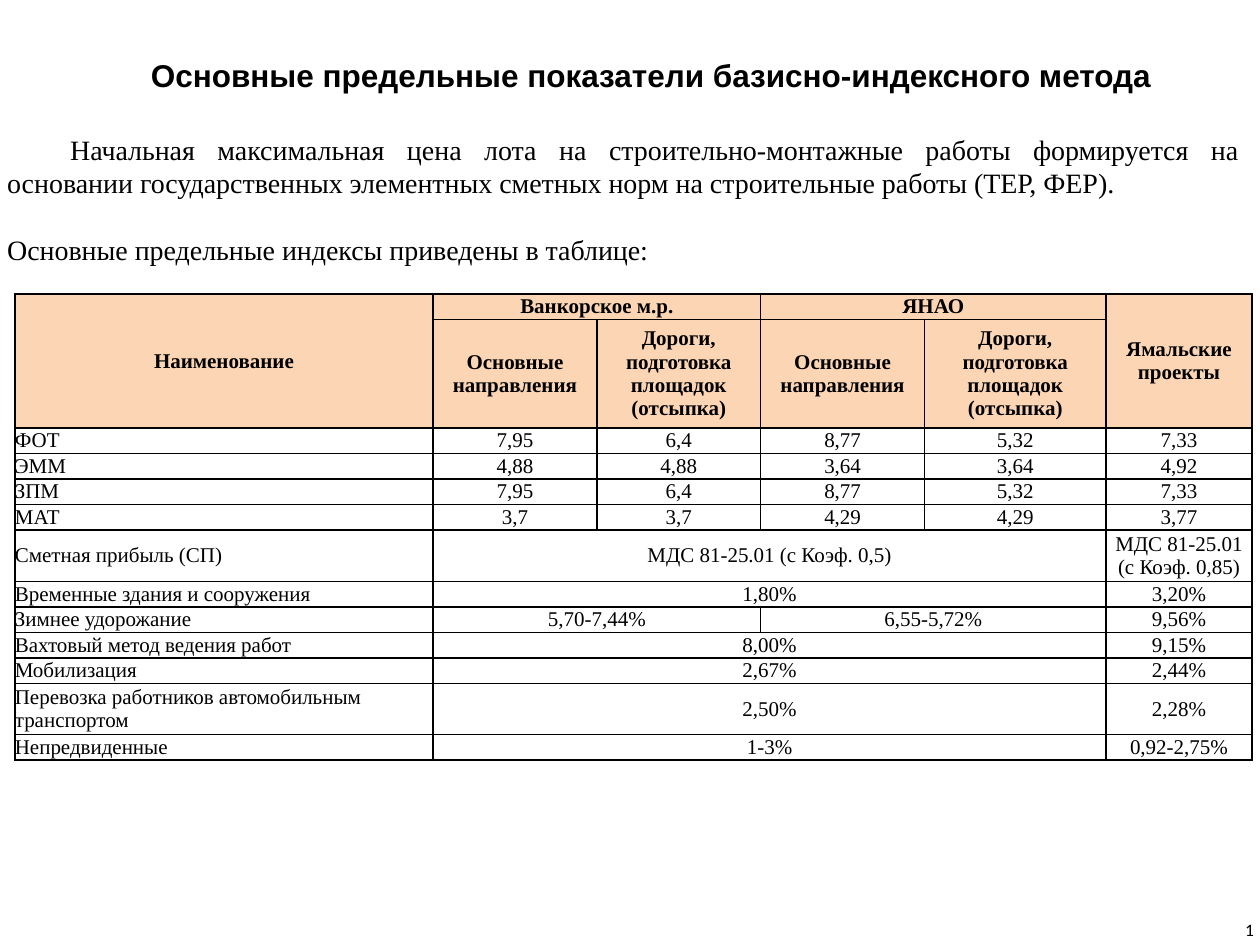
from dataclasses import dataclass

from lxml import etree
from pptx import Presentation
from pptx.dml.color import RGBColor
from pptx.enum import text
from pptx.oxml import ns
from pptx.util import Pt

BLACK = "000000"
HEADER_FILL = "FCD5B4"
SERIF = "Times New Roman"
LEFT, CENTER = text.PP_ALIGN.LEFT, text.PP_ALIGN.CENTER
RIGHT, JUSTIFY = text.PP_ALIGN.RIGHT, text.PP_ALIGN.JUSTIFY

COLUMNS = [239, 93.6, 93.6, 93.6, 103.7, 83.5]
LINE_HEIGHT = 14.6
DIRECTIONS = "Основные направления"
ROADS = "Дороги, подготовка площадок (отсыпка)"


@dataclass
class Row:
    """A table row; None continues the cell to its left."""
    values: list
    height: float = LINE_HEIGHT
    header: bool = False


def common(name: str, value: str, yamal: str, lines: int = 1) -> Row:
    """A row with one value across both regions."""
    return Row([name, value, None, None, None, yamal], LINE_HEIGHT * lines)


ROWS = [
    Row(["Наименование", "Ванкорское м.р.", None, "ЯНАО", None,
         "Ямальские проекты"], header=True),
    Row(["", DIRECTIONS, ROADS, DIRECTIONS, ROADS, ""], 62, header=True),
    Row(["ФОТ", "7,95", "6,4", "8,77", "5,32", "7,33"]),
    Row(["ЭММ", "4,88", "4,88", "3,64", "3,64", "4,92"]),
    Row(["ЗПМ", "7,95", "6,4", "8,77", "5,32", "7,33"]),
    Row(["МАТ", "3,7", "3,7", "4,29", "4,29", "3,77"]),
    common("Сметная прибыль (СП)", "МДС 81-25.01 (с Коэф. 0,5)",
           "МДС 81-25.01 (с Коэф. 0,85)", 2),
    common("Временные здания и сооружения", "1,80%", "3,20%"),
    Row(["Зимнее удорожание", "5,70-7,44%", None, "6,55-5,72%", None, "9,56%"]),
    common("Вахтовый метод ведения работ", "8,00%", "9,15%"),
    common("Мобилизация", "2,67%", "2,44%"),
    common("Перевозка работников автомобильным транспортом", "2,50%", "2,28%", 2),
    common("Непредвиденные", "1-3%", "0,92-2,75%"),
]


def rgb(color: str) -> RGBColor:
    return RGBColor.from_string(color)


def format_paragraph(p, font: str, size: float, align, bold: bool = False) -> None:
    p.alignment = align
    for r in p.runs:
        r.font.name, r.font.size, r.font.bold = font, Pt(size), bold
        r.font.color.rgb = rgb(BLACK)


def set_margins(target, left: float, top: float, right: float, bottom: float) -> None:
    target.margin_left, target.margin_top = Pt(left), Pt(top)
    target.margin_right, target.margin_bottom = Pt(right), Pt(bottom)


def set_borders(cell, color: str, width: float) -> None:
    tc_pr = cell._tc.get_or_add_tcPr()
    for i, side in enumerate(("a:lnL", "a:lnR", "a:lnT", "a:lnB")):
        ln = etree.Element(ns.qn(side), w=str(Pt(width)))
        fill = etree.SubElement(ln, ns.qn("a:solidFill"))
        etree.SubElement(fill, ns.qn("a:srgbClr"), val=color)
        tc_pr.insert(i, ln)


def add_title(s, title: str) -> None:
    sp = s.shapes.title
    sp.left, sp.top, sp.width, sp.height = Pt(48), Pt(26), Pt(618), Pt(34)
    tf = sp.text_frame
    tf.text = title
    tf.auto_size = text.MSO_AUTO_SIZE.NONE
    tf.vertical_anchor = text.MSO_ANCHOR.MIDDLE
    set_margins(tf, 3, 3, 8, 3)
    format_paragraph(tf.paragraphs[0], "Arial", 18, RIGHT, bold=True)


def add_intro(s, intro: str, caption: str) -> None:
    sp = s.shapes.add_textbox(Pt(-3), Pt(72), Pt(718.5), Pt(85))
    tf = sp.text_frame
    tf.word_wrap = True
    tf.text = intro
    first, last = tf.paragraphs[0], tf.add_paragraph()
    last.text = caption
    first._p.get_or_add_pPr().set("indent", str(Pt(36)))
    last.space_before = Pt(19.2)
    for p in (first, last):
        format_paragraph(p, SERIF, 16, JUSTIFY)


def add_index_table(s, rows: list[Row]) -> None:
    height = sum(row.height for row in rows)
    table = s.shapes.add_table(len(rows), len(COLUMNS), Pt(8.5), Pt(168),
                               Pt(sum(COLUMNS)), Pt(height)).table
    table.horz_banding = table.first_row = False
    for column, width in zip(table.columns, COLUMNS):
        column.width = Pt(width)
    for i, row in enumerate(rows):
        table.rows[i].height = Pt(row.height)
        for j, value in enumerate(row.values):
            cell = table.cell(i, j)
            cell.vertical_anchor = text.MSO_ANCHOR.MIDDLE
            set_margins(cell, 0, 0, 0, 0)
            if row.header:
                cell.fill.solid()
                cell.fill.fore_color.rgb = rgb(HEADER_FILL)
            else:
                cell.fill.background()
            set_borders(cell, BLACK, 1)
            if value:
                cell.text = value
                align = CENTER if row.header or j else LEFT
                format_paragraph(cell.text_frame.paragraphs[0], SERIF, 12,
                                 align, row.header)
                end = j
                while end + 1 < len(COLUMNS) and row.values[end + 1] is None:
                    end += 1
                if end > j:
                    cell.merge(table.cell(i, end))
    for j in (0, len(COLUMNS) - 1):
        table.cell(0, j).merge(table.cell(1, j))


def add_page_number(s, number: str) -> None:
    sp = s.shapes.add_textbox(Pt(690.5), Pt(525), Pt(26), Pt(11))
    tf = sp.text_frame
    tf.word_wrap = True
    tf.text = number
    set_margins(tf, 0, 0, 0, 0)
    format_paragraph(tf.paragraphs[0], "Calibri", 10, RIGHT)


def main() -> None:
    prs = Presentation()
    prs.slide_width, prs.slide_height = Pt(720), Pt(540)
    s = prs.slides.add_slide(prs.slide_layouts[5])
    add_title(s, "Основные предельные показатели базисно-индексного метода")
    add_intro(
        s,
        "Начальная максимальная цена лота на строительно-монтажные работы "
        "формируется на основании государственных элементных сметных норм "
        "на строительные работы (ТЕР, ФЕР).",
        "Основные предельные индексы приведены в таблице:",
    )
    add_index_table(s, ROWS)
    add_page_number(s, "1")
    prs.save("out.pptx")


if __name__ == "__main__":
    main()
